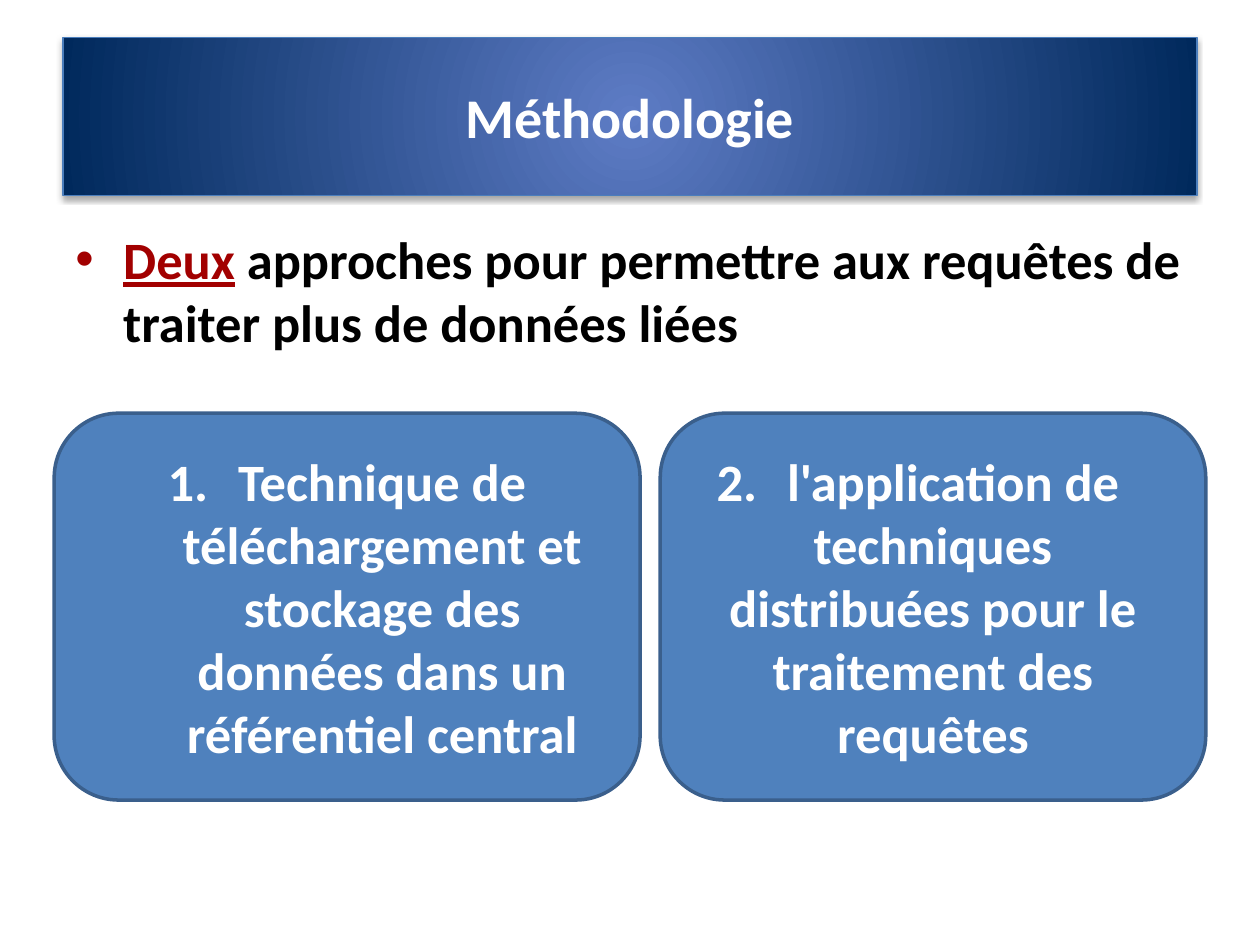
from dataclasses import dataclass

from lxml.etree import SubElement
from pptx import Presentation
from pptx.dml.color import RGBColor
from pptx.enum.shapes import MSO_SHAPE
from pptx.enum.text import MSO_ANCHOR, PP_ALIGN
from pptx.oxml.ns import qn
from pptx.slide import Slide
from pptx.util import Inches, Pt

COLUMNS, ROWS = 100, 75


def color(value):
    """Turn a hex string into a colour."""
    return RGBColor.from_string(value)


def child(parent, tag, **attributes):
    """Append a drawing element with the given attributes."""
    element = SubElement(parent, qn(tag))
    for name, value in attributes.items():
        element.set(name, str(value))
    return element


@dataclass
class SlideBuilder:
    """Hold the style and the current slide."""

    slide: Slide
    width: int
    height: int
    font: str = "Calibri"
    body_size: float = 30
    title_size: float = 32
    box_fill: str = "4F81BD"
    box_line: str = "3A5F8C"
    accent: str = "A20000"

    def place(self, left, top, columns, rows):
        """Convert grid units to slide lengths."""
        column, row = self.width / COLUMNS, self.height / ROWS
        return int(left * column), int(top * row), int(columns * column), int(rows * row)

    def add_text(self, frame, runs, size, text_color, align, anchor):
        """Fill a text frame with one bold paragraph."""
        frame.word_wrap = True
        frame.vertical_anchor = anchor
        paragraph = frame.paragraphs[0]
        paragraph.alignment = align
        paragraph.font.name = self.font
        paragraph.font.size = Pt(size)
        paragraph.font.bold = True
        paragraph.font.color.rgb = color(text_color)
        for text in runs:
            paragraph.add_run().text = text
        return paragraph

    def mark(self, paragraph, margin, indent, tag, **attributes):
        """Give a paragraph a bullet or number with a hanging indent."""
        properties = paragraph._p.get_or_add_pPr()
        properties.set("marL", str(Inches(margin)))
        properties.set("indent", str(Inches(indent)))
        bullet = properties.makeelement(qn(tag), {k: str(v) for k, v in attributes.items()})
        font = properties.makeelement(qn("a:buFont"), {"typeface": "Arial" if tag == "a:buChar" else "+mj-lt"})
        properties.insert(0, font)
        font.addnext(bullet)

    def shape(self, kind, place, line_color, line_width):
        """Add an outlined preset shape without shadow."""
        shape = self.slide.shapes.add_shape(kind, *self.place(*place))
        shape.shadow.inherit = False
        shape.line.color.rgb = color(line_color)
        shape.line.width = Pt(line_width)
        return shape

    def title(self, text, place, inner, outer):
        """Add the title banner with a radial gradient and a soft shadow."""
        banner = self.shape(MSO_SHAPE.RECTANGLE, place, "4B7EBC", 0.75)
        banner.fill.gradient()
        for stop, value in zip(banner.fill.gradient_stops, (inner, outer)):
            stop.color.rgb = color(value)
        properties = banner._element.spPr
        gradient = properties.find(qn("a:gradFill"))
        gradient.remove(gradient.find(qn("a:lin")))
        circle = child(gradient, "a:path", path="circle")
        child(circle, "a:fillToRect", l=50000, t=50000, r=50000, b=50000)
        shadow = child(properties.find(qn("a:effectLst")), "a:outerShdw", blurRad=Pt(3.1),
                       dist=Pt(1.8), dir=5400000, rotWithShape=0)
        child(child(shadow, "a:srgbClr", val="000000"), "a:alpha", val=35000)
        self.add_text(banner.text_frame, [text], self.title_size, "FFFFFF",
                      PP_ALIGN.CENTER, MSO_ANCHOR.MIDDLE)

    def bullet(self, lead, rest, place):
        """Add a bulleted statement with an underlined lead word."""
        box = self.slide.shapes.add_textbox(*self.place(*place))
        paragraph = self.add_text(box.text_frame, [lead, rest], self.body_size, "000000",
                                  PP_ALIGN.LEFT, MSO_ANCHOR.TOP)
        self.mark(paragraph, 0.38, -0.38, "a:buChar", char="•")
        font = paragraph.runs[0].font
        font.underline = True
        font.color.rgb = color(self.accent)

    def approach(self, number, text, place, margin, level):
        """Add a rounded box with a numbered approach."""
        box = self.shape(MSO_SHAPE.ROUNDED_RECTANGLE, place, self.box_line, 2)
        box.fill.solid()
        box.fill.fore_color.rgb = color(self.box_fill)
        paragraph = self.add_text(box.text_frame, [text], self.body_size, "FFFFFF",
                                  PP_ALIGN.CENTER, MSO_ANCHOR.MIDDLE)
        paragraph.level = level
        self.mark(paragraph, margin, -0.56, "a:buAutoNum", type="arabicPeriod", startAt=number)


def main():
    """Build and save the methodology slide."""
    presentation = Presentation()
    presentation.slide_width, presentation.slide_height = Inches(10), Inches(7.5)
    slide = presentation.slides.add_slide(presentation.slide_layouts[6])
    builder = SlideBuilder(slide, presentation.slide_width, presentation.slide_height)
    builder.bullet("Deux", " approches pour permettre aux requêtes de traiter plus de données liées",
                   (5, 17.5, 90, 49.5))
    builder.title("Méthodologie", (5, 3, 90, 12.5), "5E7CC5", "00295C")
    top, rows = 32.8, 30.7
    builder.approach(1, "Technique de téléchargement et stockage des données dans un référentiel central",
                     (4.3, top, 46.5, rows), 0.56, 0)
    builder.approach(2, "l'application de techniques distribuées pour le traitement des requêtes",
                     (52.4, top, 43.3, rows), 0, 1)
    presentation.save("out.pptx")


if __name__ == "__main__":
    main()
